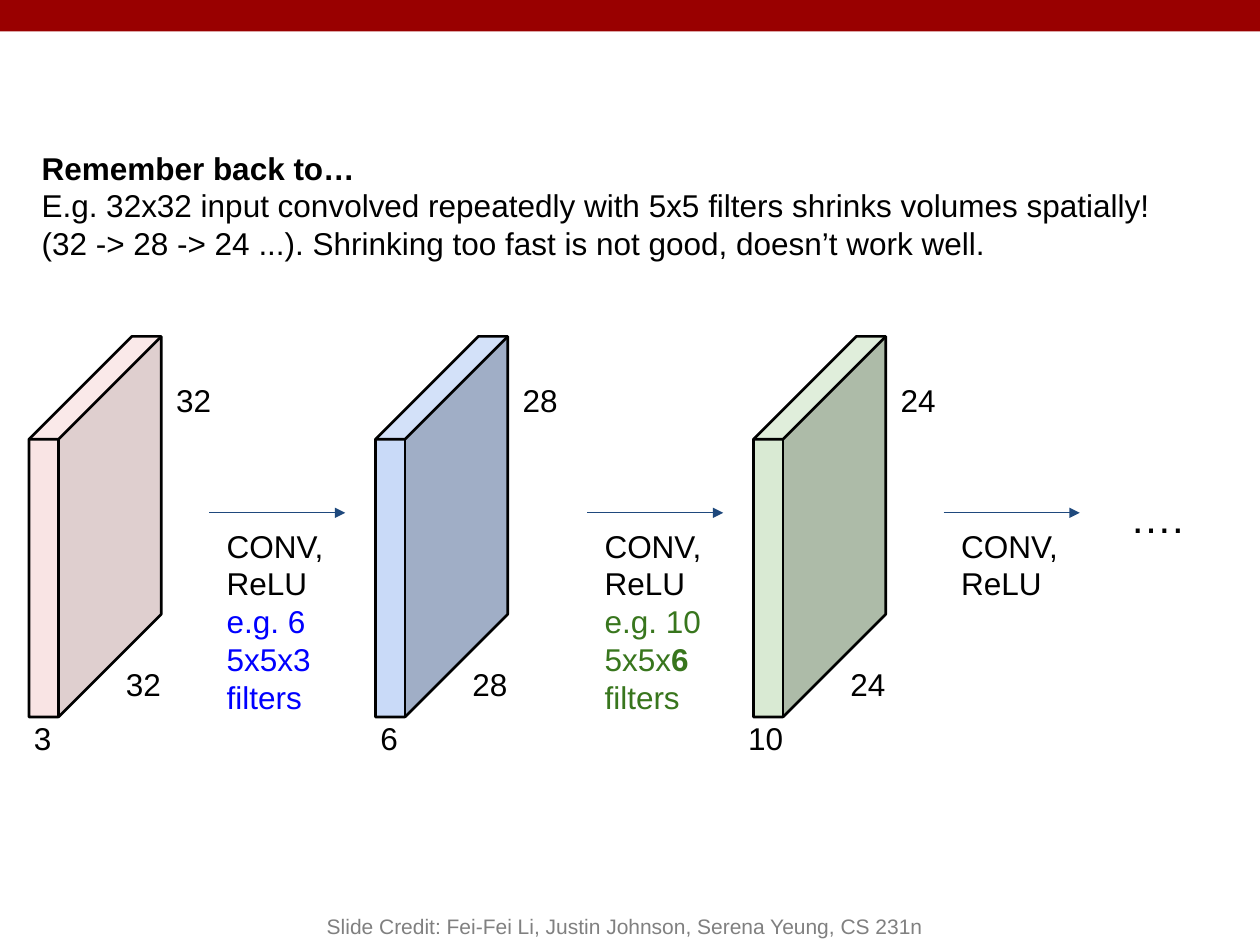
from dataclasses import dataclass

from lxml.etree import SubElement
from pptx import Presentation
from pptx.dml.color import RGBColor
from pptx.enum.shapes import MSO_CONNECTOR, MSO_SHAPE
from pptx.enum.text import MSO_ANCHOR as Anchor, MSO_AUTO_SIZE as AutoSize, PP_ALIGN as Align
from pptx.oxml.ns import qn
from pptx.util import Inches, Pt


@dataclass(frozen=True)
class Theme:
    font: str = "Arial"
    body: int = 18
    dots: int = 24
    credit: int = 12
    leading: float = 1.2
    banner: str = "990000"
    ink: str = "000000"
    muted: str = "808080"
    arrow: str = "1F497D"
    pink: str = "F4CCCC"
    sky: str = "C9DAF8"
    mint: str = "D9EAD3"
    blue: str = "0000FF"
    green: str = "38761D"


@dataclass(frozen=True)
class Span:
    text: str
    color: str = Theme.ink
    bold: bool = False


class SlideBuilder:
    def __init__(self, slide, theme):
        self.slide = slide
        self.theme = theme

    def fill_text(self, frame, paragraphs, size, align=Align.LEFT, anchor=Anchor.TOP, inset=0.1):
        """Fill a text frame; each paragraph is a list of spans."""
        frame.word_wrap = True
        frame.auto_size = AutoSize.NONE
        frame.vertical_anchor = anchor
        frame.margin_left = frame.margin_right = Inches(0.1)
        frame.margin_top = frame.margin_bottom = Inches(inset)
        for index, spans in enumerate(paragraphs):
            paragraph = frame.add_paragraph() if index else frame.paragraphs[0]
            paragraph.alignment = align
            paragraph.line_spacing = Pt(size * self.theme.leading)
            for span in spans:
                run = paragraph.add_run()
                run.text = span.text
                run.font.name = self.theme.font
                run.font.size = Pt(size)
                run.font.bold = span.bold
                run.font.color.rgb = RGBColor.from_string(span.color)

    def title(self, left, top, width, height, paragraphs):
        heading = self.slide.shapes.title
        heading.left, heading.top = Inches(left), Inches(top)
        heading.width, heading.height = Inches(width), Inches(height)
        self.fill_text(heading.text_frame, paragraphs, self.theme.body)

    def text(self, left, top, width, height, paragraphs, size=Theme.body, **layout):
        box = self.slide.shapes.add_textbox(
            Inches(left), Inches(top), Inches(width), Inches(height))
        self.fill_text(box.text_frame, paragraphs, size, **layout)

    def solid(self, kind, left, top, width, height, color):
        shape = self.slide.shapes.add_shape(
            kind, Inches(left), Inches(top), Inches(width), Inches(height))
        shape.shadow.inherit = False
        shape.fill.solid()
        shape.fill.fore_color.rgb = RGBColor.from_string(color)
        return shape

    def banner(self, width, height):
        band = self.solid(MSO_SHAPE.RECTANGLE, 0, 0, width, height, self.theme.banner)
        band.line.fill.background()

    def volume(self, left, color, side, depth, depth_offset, opacity=None):
        """Draw an activation volume with its two side lengths and its depth."""
        cube = self.solid(MSO_SHAPE.CUBE, left, 2.67, 1.05, 3.02, color)
        cube.adjustments[0] = 0.777
        cube.line.color.rgb = RGBColor.from_string(self.theme.ink)
        cube.line.width = Pt(1.5)
        if opacity is not None:
            tint = cube._element.spPr.find(qn("a:solidFill"))[0]
            SubElement(tint, qn("a:alpha")).set("val", str(opacity * 1000))
        self.text(left + 0.67, 5.18, 0.54, 0.34, [[Span(side)]])
        self.text(left + 1.07, 2.92, 0.54, 0.31, [[Span(side)]])
        self.text(left + depth_offset, 5.61, 0.54, 0.2, [[Span(depth)]])

    def conv_step(self, left, filters=(), label_width=1.08):
        """Draw an arrow with the layer name and an optional filter note below."""
        y = Inches(4.07)
        arrow = self.slide.shapes.add_connector(
            MSO_CONNECTOR.STRAIGHT, Inches(left), y, Inches(left + 1.08), y)
        arrow.line.color.rgb = RGBColor.from_string(self.theme.arrow)
        arrow.line.width = Pt(0.75)
        properties = arrow._element.spPr
        SubElement(properties.find(qn("a:ln")), qn("a:tailEnd")).set("type", "triangle")
        SubElement(properties, qn("a:effectLst"))
        lines = [[Span("CONV,")], [Span("ReLU")]]
        if filters:
            lines.append(filters)
        self.text(left + 0.04, 4.08, label_width, 0.43, lines)


def main():
    theme = Theme()
    deck = Presentation()
    deck.slide_width, deck.slide_height = Inches(10), Inches(7.5)
    title_only = deck.slide_layouts[5]
    builder = SlideBuilder(deck.slides.add_slide(title_only), theme)

    builder.banner(10, 0.25)
    builder.title(0.23, 1.08, 9.35, 0.66, [
        [Span("Remember back to…", bold=True)],
        [Span("E.g. 32x32 input convolved repeatedly with 5x5 filters shrinks volumes spatially!")],
        [Span("(32 -> 28 -> 24 ...). Shrinking too fast is not good, doesn’t work well.")],
    ])

    builder.volume(0.23, theme.pink, "32", "3", -0.06, opacity=52)
    builder.conv_step(1.66, [Span("e.g. 6 5x5x3 filters", theme.blue)])
    builder.volume(2.98, theme.sky, "28", "6", -0.06)
    builder.conv_step(4.66, [
        Span("e.g. 10 5x5x", theme.green),
        Span("6 ", theme.green, bold=True),
        Span("filters", theme.green),
    ], label_width=1.16)
    builder.volume(5.98, theme.mint, "24", "10", -0.14)
    builder.conv_step(7.49)
    builder.text(8.87, 3.8, 1.05, 0.39, [[Span("….")]], theme.dots)

    builder.text(
        2, 7, 5.92, 0.5,
        [[Span("Slide Credit: Fei-Fei Li, Justin Johnson, Serena Yeung, CS 231n", theme.muted)]],
        theme.credit, align=Align.CENTER, anchor=Anchor.BOTTOM, inset=0.05)
    deck.save("out.pptx")


if __name__ == "__main__":
    main()
